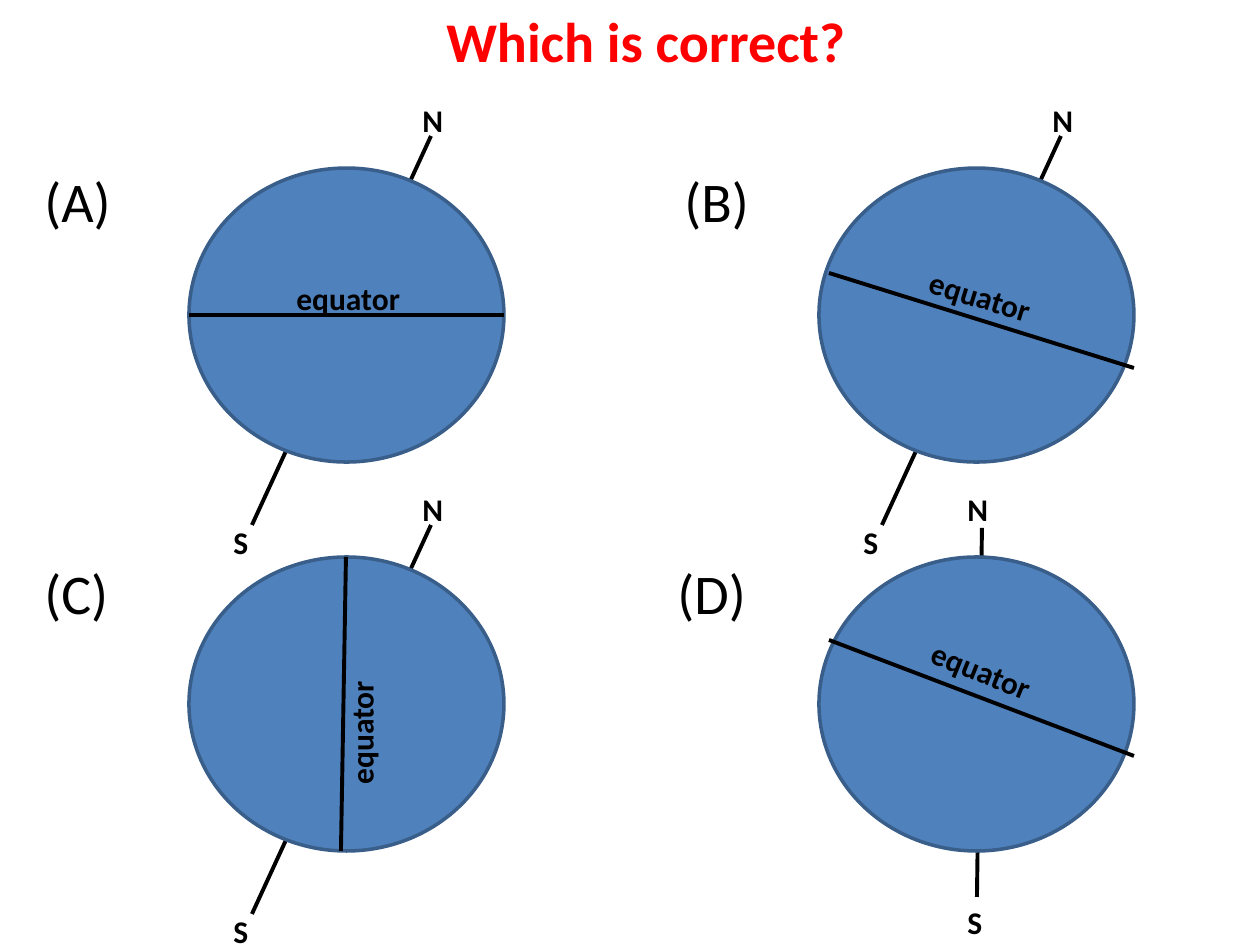
from dataclasses import dataclass

import lxml.etree
import pptx
import pptx.dml.color
import pptx.enum.shapes
import pptx.enum.text
import pptx.oxml.ns
import pptx.util

EMU_PER_PX = 914400 // 126
FONT = "Calibri"
BLACK, RED, BLUE, DARK_BLUE = "000000", "FF0000", "4F81BD", "395E89"

# Grid of globes, in px
GLOBE_LEFT, GLOBE_TOP = 189, 168
COLUMN_STEP, ROW_STEP = 630, 389
GLOBE_WIDTH, GLOBE_HEIGHT = 315, 294

Point = tuple[int, int]


@dataclass
class Axis:
    """Line ends and pole label corners, relative to the globe's corner."""
    north: Point
    south: Point
    north_label: Point
    south_label: Point


@dataclass
class Option:
    letter: str
    letter_at: Point
    axis: Axis
    equator_start: Point
    equator_end: Point
    equator_label: Point
    rotation: float


TILTED = Axis((242, -32), (63, 357), (221, -73), (32, 349))
UPRIGHT = Axis((163, -29), (158, 340), (136, -73), (136, 340))

# Listed row by row, two to a row
OPTIONS = [
    Option("(A)", (32, 160), TILTED, (0, 147), (315, 147), (95, 105), 0),
    Option("(B)", (672, 160), TILTED, (10, 105), (315, 200), (95, 116), 17.1),
    Option("(C)", (32, 552), TILTED, (157, 0), (152, 294), (62, 105), 270),
    Option("(D)", (665, 552), UPRIGHT, (10, 83), (315, 199), (95, 105), 22),
]


def px(length: int) -> int:
    return pptx.util.Emu(length * EMU_PER_PX)


def color(value: str) -> pptx.dml.color.RGBColor:
    return pptx.dml.color.RGBColor.from_string(value)


def shift(origin: Point, offset: Point) -> Point:
    return origin[0] + offset[0], origin[1] + offset[1]


def write(frame, text: str, size: int, hex_color: str, bold: bool) -> None:
    frame.word_wrap = True
    frame.auto_size = pptx.enum.text.MSO_AUTO_SIZE.NONE
    frame.vertical_anchor = pptx.enum.text.MSO_ANCHOR.TOP
    run = frame.paragraphs[0].add_run()
    run.text = text
    run.font.name = FONT
    run.font.size = pptx.util.Pt(size)
    run.font.bold = bold
    run.font.color.rgb = color(hex_color)


def add_label(slide, text: str, at: Point, width: int, height: int = 50,
              size: int = 18, bold: bool = True, rotation: float = 0) -> None:
    box = slide.shapes.add_textbox(px(at[0]), px(at[1]), px(width), px(height))
    box.rotation = rotation
    write(box.text_frame, text, size, BLACK, bold)


def add_line(slide, start: Point, end: Point) -> None:
    line = slide.shapes.add_connector(
        pptx.enum.shapes.MSO_CONNECTOR.STRAIGHT,
        px(start[0]), px(start[1]), px(end[0]), px(end[1]))
    line.line.color.rgb = color(BLACK)
    line.line.width = pptx.util.Pt(2.25)
    # An empty effect list removes the theme shadow
    lxml.etree.SubElement(line._element.spPr, pptx.oxml.ns.qn("a:effectLst"))


def add_globe(slide, at: Point) -> None:
    globe = slide.shapes.add_shape(
        pptx.enum.shapes.MSO_SHAPE.OVAL,
        px(at[0]), px(at[1]), px(GLOBE_WIDTH), px(GLOBE_HEIGHT))
    globe.shadow.inherit = False
    globe.fill.solid()
    globe.fill.fore_color.rgb = color(BLUE)
    globe.line.color.rgb = color(DARK_BLUE)
    globe.line.width = pptx.util.Pt(2)


def add_option(slide, option: Option, corner: Point) -> None:
    axis = option.axis
    add_label(slide, option.letter, option.letter_at, 110, 80, size=32, bold=False)
    # The globe hides the middle of the axis
    add_line(slide, shift(corner, axis.north), shift(corner, axis.south))
    add_globe(slide, corner)
    add_line(slide, shift(corner, option.equator_start), shift(corner, option.equator_end))
    add_label(slide, "equator", shift(corner, option.equator_label), 220,
              rotation=option.rotation)
    add_label(slide, "N", shift(corner, axis.north_label), 63)
    add_label(slide, "S", shift(corner, axis.south_label), 63)


def main() -> None:
    presentation = pptx.Presentation()
    presentation.slide_width = pptx.util.Inches(10)
    presentation.slide_height = pptx.util.Inches(7.5)
    slide = presentation.slides.add_slide(presentation.slide_layouts[5])

    # Title
    title = slide.shapes.title
    title.left, title.top, title.width, title.height = px(32), px(0), px(1228), px(80)
    write(title.text_frame, "Which is correct?", 32, RED, True)
    title.text_frame.paragraphs[0].alignment = pptx.enum.text.PP_ALIGN.CENTER

    # Four answer options
    for index, option in enumerate(OPTIONS):
        row, column = divmod(index, 2)
        corner = (GLOBE_LEFT + column * COLUMN_STEP, GLOBE_TOP + row * ROW_STEP)
        add_option(slide, option, corner)

    presentation.save("out.pptx")


if __name__ == "__main__":
    main()
